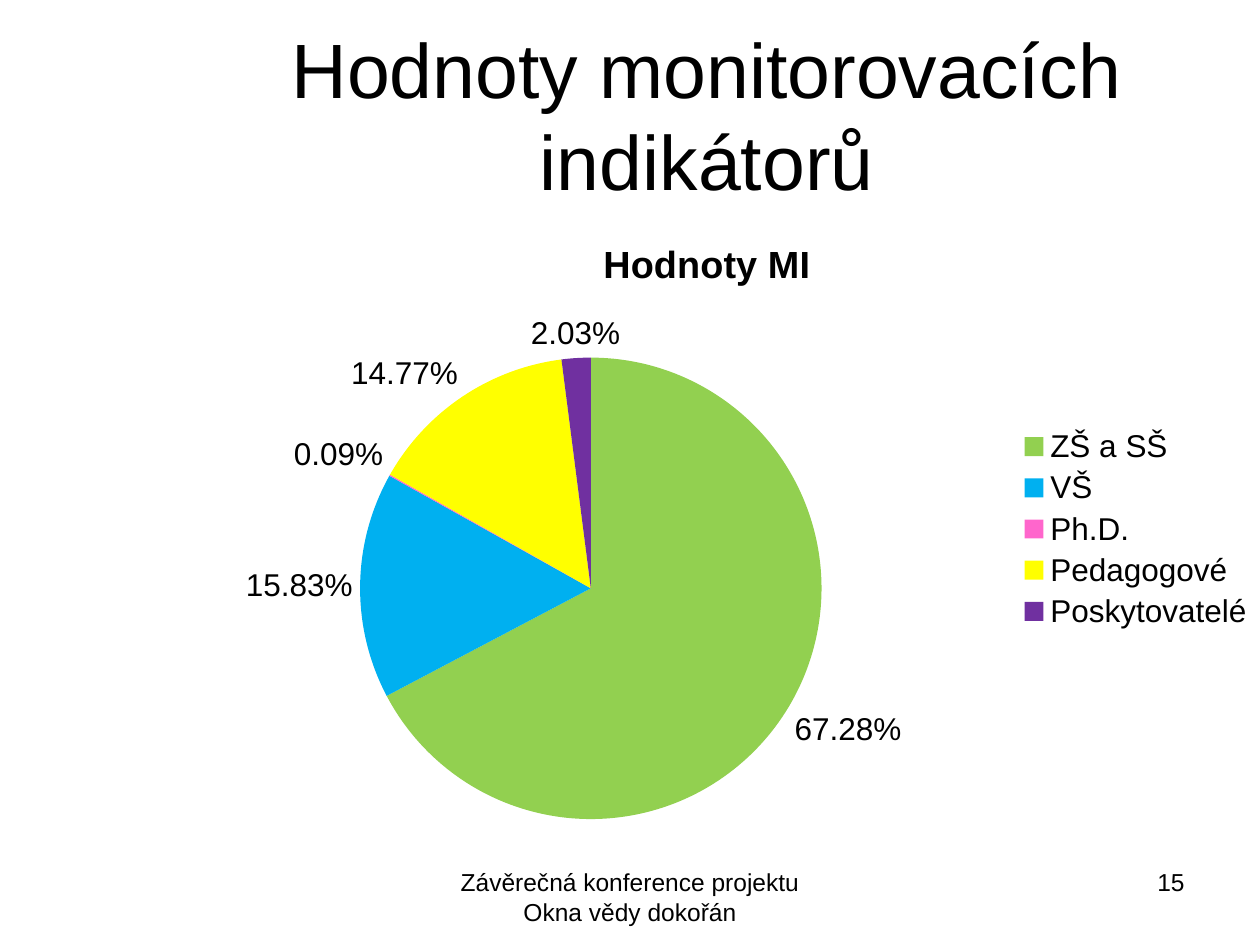
from lxml.etree import SubElement
from pptx import Presentation
from pptx.chart.data import CategoryChartData
from pptx.dml.color import RGBColor
from pptx.enum.chart import XL_CHART_TYPE as ChartType
from pptx.enum.chart import XL_LABEL_POSITION as LabelPos
from pptx.enum.chart import XL_LEGEND_POSITION as LegendPos
from pptx.enum.text import MSO_ANCHOR as Anchor
from pptx.enum.text import PP_ALIGN as Align
from pptx.oxml.ns import qn
from pptx.util import Pt

FONT, BLACK = "Arial", "000000"
HEADING = "Hodnoty monitorovacích indikátorů"
CHART_TITLE = "Hodnoty MI"
FOOTER = "Závěrečná konference projektu Okna vědy dokořán"
PAGE = "15"
SHARES = [  # group, percent, colour
    ("ZŠ a SŠ", 67.28, "92D050"),
    ("VŠ", 15.83, "00B0F0"),
    ("Ph.D.", 0.09, "FF66CC"),
    ("Pedagogové", 14.77, "FFFF00"),
    ("Poskytovatelé", 2.03, "7030A0"),
]
LEFT, WIDTH = 88, 632
FOOTER_TOP, FOOTER_HEIGHT = 492, 37
PIE_AREA = {"x": 0.185, "y": 0.23, "w": 0.42, "h": 0.74}
LEGEND_AREA = {"x": 0.775, "y": 0.335, "w": 0.225, "h": 0.34}


def rgb(value):
    return RGBColor.from_string(value)


def style(font, size, bold=False, color=BLACK):
    font.name, font.size, font.bold = FONT, Pt(size), bold
    font.color.rgb = rgb(color)


def add_text(slide, text, box, size=14, align=Align.CENTER, anchor=Anchor.TOP):
    frame = slide.shapes.add_textbox(*map(Pt, box)).text_frame
    frame.word_wrap = True
    frame.vertical_anchor = anchor
    paragraph = frame.paragraphs[0]
    paragraph.alignment = align
    run = paragraph.add_run()
    run.text = text
    style(run.font, size)


def place(layout, area, inner=False):
    """Fix a chart part at fractions of the chart's size."""
    manual = SubElement(layout, qn("c:manualLayout"))
    settings = {"layoutTarget": "inner"} if inner else {}
    settings |= {"xMode": "edge", "yMode": "edge"} | area
    for tag, value in settings.items():
        SubElement(manual, qn(f"c:{tag}")).set("val", str(value))


def add_pie(slide, box):
    data = CategoryChartData(number_format="0.00")
    data.categories = [group for group, _, _ in SHARES]
    data.add_series(CHART_TITLE, [percent for _, percent, _ in SHARES])
    chart = slide.shapes.add_chart(ChartType.PIE, *map(Pt, box), data).chart
    style(chart.font, 18)

    chart.has_title = True
    title = chart.chart_title.text_frame
    title.text = CHART_TITLE
    style(title.paragraphs[0].runs[0].font, 21.6, bold=True)

    chart.has_legend = True
    legend = chart.legend
    legend.position = LegendPos.RIGHT
    legend.include_in_layout = False
    style(legend.font, 18)

    plot = chart.plots[0]
    plot.vary_by_categories = True
    pie = plot.series[0]
    for index, (_, _, color) in enumerate(SHARES):
        fill = pie.points[index].format.fill
        fill.solid()
        fill.fore_color.rgb = rgb(color)

    labels = pie.data_labels
    labels.show_percentage, labels.show_value = True, False
    labels.number_format, labels.number_format_is_linked = "0.00%", False
    labels.position = LabelPos.OUTSIDE_END
    style(labels.font, 18)

    plot_area = chart.element.find(".//" + qn("c:plotArea"))
    plot_layout = plot_area.find(qn("c:layout"))
    if plot_layout is None:
        plot_layout = SubElement(plot_area, qn("c:layout"))
        plot_area.insert(0, plot_layout)
    place(plot_layout, PIE_AREA, inner=True)
    legend_element = chart.element.find(".//" + qn("c:legend"))
    legend_layout = legend_element.find(qn("c:layout"))
    if legend_layout is None:
        legend_layout = SubElement(legend_element, qn("c:layout"))
        legend_element.find(qn("c:legendPos")).addnext(legend_layout)
    place(legend_layout, LEGEND_AREA)


def main():
    deck = Presentation()
    deck.slide_width, deck.slide_height = Pt(720), Pt(540)
    slide = deck.slides.add_slide(deck.slide_layouts[6])
    add_text(slide, HEADING, (LEFT, 20, WIDTH, 90), size=44, anchor=Anchor.MIDDLE)
    add_pie(slide, (LEFT, 122.4, WIDTH, 356.4))
    add_text(slide, FOOTER, (246, FOOTER_TOP, 228, FOOTER_HEIGHT))
    add_text(slide, PAGE, (516, FOOTER_TOP, 168, FOOTER_HEIGHT), align=Align.RIGHT)
    deck.save("out.pptx")


if __name__ == "__main__":
    main()
